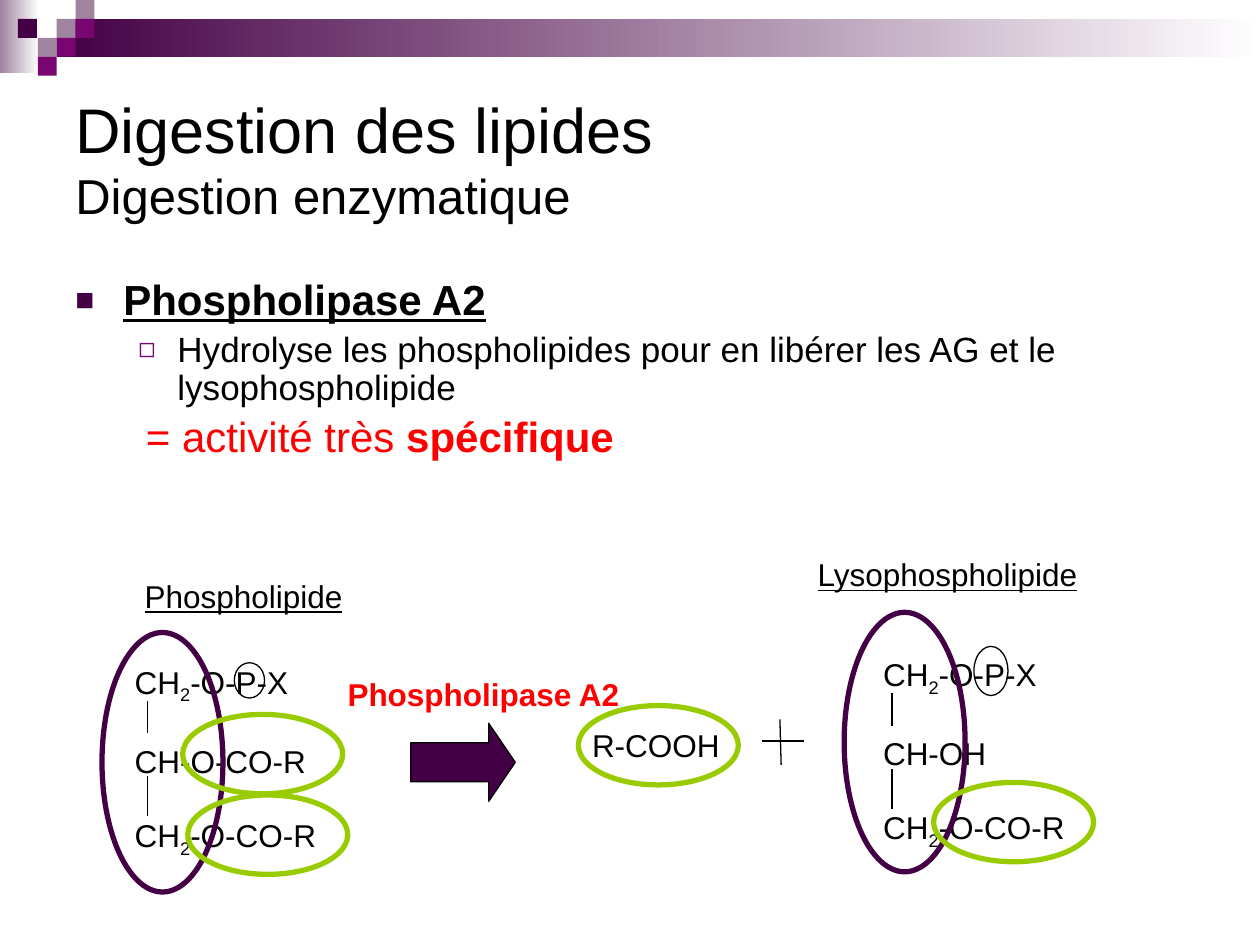
from dataclasses import dataclass

from lxml import etree
from pptx import Presentation
from pptx.dml.color import RGBColor
from pptx.enum.shapes import MSO_CONNECTOR, MSO_SHAPE
from pptx.enum.text import MSO_ANCHOR
from pptx.oxml.ns import qn
from pptx.util import Inches, Pt


@dataclass(frozen=True)
class Theme:
    font: str = "Arial"
    black: str = "000000"
    white: str = "FFFFFF"
    red: str = "FF0000"
    plum: str = "440044"
    magenta: str = "790571"
    mauve: str = "9F839F"
    lime: str = "99CC00"
    title: int = 36
    subtitle: int = 28
    heading: int = 24
    body: int = 20
    label: int = 18
    thin: float = 0.75
    thick: float = 3


THEME = Theme()


def rgb(value):
    return RGBColor.from_string(value)


def add_shape(slide, kind, box, fill=None, line=None, weight=THEME.thin):
    """A fill given as a pair of colours becomes a left-to-right gradient."""
    shape = slide.shapes.add_shape(kind, *map(Inches, box))
    shape.shadow.inherit = False
    if isinstance(fill, tuple):
        shape.fill.gradient()
        shape.fill.gradient_angle = 0
        for stop, color in zip(shape.fill.gradient_stops, fill):
            stop.color.rgb = rgb(color)
    elif fill:
        shape.fill.solid()
        shape.fill.fore_color.rgb = rgb(fill)
    else:
        shape.fill.background()
    if line:
        shape.line.color.rgb = rgb(line)
        shape.line.width = Pt(weight)
    else:
        shape.line.fill.background()
    return shape


def add_oval(slide, box, color, weight=THEME.thick):
    add_shape(slide, MSO_SHAPE.OVAL, box, line=color, weight=weight)


def add_line(slide, x1, y1, x2, y2):
    line = slide.shapes.add_connector(
        MSO_CONNECTOR.STRAIGHT, *map(Inches, (x1, y1, x2, y2)))
    line.line.color.rgb = rgb(THEME.black)
    line.line.width = Pt(THEME.thin)
    etree.SubElement(line._element.spPr, qn("a:effectLst"))


def add_text_frame(slide, box, wrap=False):
    frame = slide.shapes.add_textbox(*map(Inches, box)).text_frame
    frame.word_wrap = wrap
    return frame


def set_font(font, size=None, color=THEME.black, bold=None, underline=None):
    font.name = THEME.font
    font.color.rgb = rgb(color)
    font.size = Pt(size) if size else None
    font.bold = bold
    font.underline = underline


def add_label(slide, box, text, **style):
    paragraph = add_text_frame(slide, box).paragraphs[0]
    paragraph.text = text
    set_font(paragraph.font, THEME.label, **style)


def set_indent(paragraph, margin, first, bullet=None):
    props = paragraph._p.get_or_add_pPr()
    props.set("marL", str(Inches(margin)))
    props.set("indent", str(Inches(first)))
    if not bullet:
        etree.SubElement(props, qn("a:buNone"))
        return
    char, color, percent = bullet
    color_node = etree.SubElement(props, qn("a:buClr"))
    etree.SubElement(color_node, qn("a:srgbClr"), val=color)
    etree.SubElement(props, qn("a:buSzPct"), val=str(percent * 1000))
    etree.SubElement(props, qn("a:buFont"), typeface=THEME.font)
    etree.SubElement(props, qn("a:buChar"), char=char)


def add_banner(slide, left, top, width):
    rect = MSO_SHAPE.RECTANGLE
    cell = 0.15
    add_shape(slide, rect, (left, top, 0.31, 0.58), (THEME.mauve, THEME.white))
    add_shape(slide, rect, (left + 3 * cell, top + cell, width - 3 * cell, 2 * cell),
              (THEME.plum, THEME.white))
    # Mosaic squares: column, row, colour
    for column, row, color in ((3, 1, THEME.mauve), (4, 0, THEME.mauve),
                               (4, 1, THEME.magenta), (2, 2, THEME.mauve),
                               (0.95, 1, THEME.plum), (3, 2, THEME.magenta),
                               (2, 3, THEME.magenta)):
        add_shape(slide, rect, (left + column * cell, top + row * cell, cell, cell), color)


def add_title(slide, box):
    frame = add_text_frame(slide, box, wrap=True)
    frame.vertical_anchor = MSO_ANCHOR.MIDDLE
    paragraph = frame.paragraphs[0]
    set_font(paragraph.font)
    title = paragraph.add_run()
    title.text = "Digestion des lipides "
    title.font.size = Pt(THEME.title)
    paragraph.add_line_break()
    subtitle = paragraph.add_run()
    subtitle.text = "Digestion enzymatique"
    subtitle.font.size = Pt(THEME.subtitle)


def add_body(slide, box):
    frame = add_text_frame(slide, box, wrap=True)
    enzyme, action, remark = (frame.paragraphs[0], frame.add_paragraph(),
                              frame.add_paragraph())
    enzyme.text = "Phospholipase A2"
    set_indent(enzyme, 0.38, -0.38, ("■", THEME.plum, 75))
    set_font(enzyme.font, THEME.heading, bold=True, underline=True)

    action.text = ("Hydrolyse les phospholipides pour en libérer les AG "
                   "et le lysophospholipide")
    action.level = 1
    set_indent(action, 0.81, -0.31, ("◻", THEME.magenta, 80))
    set_font(action.font, THEME.body)

    remark.add_run().text = "= activité très "
    emphasis = remark.add_run()
    emphasis.text = "spécifique"
    emphasis.font.bold = True
    remark.level = 1
    set_indent(remark, 0.56, 0)
    set_font(remark.font, THEME.heading, THEME.red)

    for paragraph in frame.paragraphs:
        paragraph.line_spacing = 0.9
        paragraph.space_before = Pt(0.2 * paragraph.font.size.pt)


def add_molecule(slide, left, top, rows, bond_x, backbone, acids, phosphate):
    """Formula with bonds; the ovals are offsets from the formula's corner."""
    frame = add_text_frame(slide, (left, top, 1.65, 1.6))
    for index, row in enumerate(rows):
        paragraph = frame.paragraphs[0] if index == 0 else frame.add_paragraph()
        if index:
            paragraph.space_before = Pt(20.7)
        set_font(paragraph.font, THEME.label)
        for part in row:
            run = paragraph.add_run()
            run.text = part
            if part == "2":
                run.font._element.set("baseline", "-25000")
    for start, end in ((0.35, 0.61), (0.95, 1.27)):
        add_line(slide, left + bond_x, top + start, left + bond_x, top + end)

    def oval(dx, dy, width, height, *style):
        add_oval(slide, (left + dx, top + dy, width, height), *style)

    oval(*backbone, 0.96, 2.06, THEME.plum)
    for acid in acids:
        oval(*acid, 1.27, 0.63, THEME.lime)
    oval(*phosphate, THEME.black, THEME.thin)


def add_reaction(slide, left, top):
    head, tail = ("CH", "2", "-O-P-X"), ("CH", "2", "-O-CO-R")
    # Substrate
    add_molecule(slide, left + 0.16, top + 0.85, (head, ("CH-O-CO-R",), tail), 0.2,
                 (-0.16, -0.19), ((0.48, 0.46), (0.52, 1.1)), (0.89, 0.05, 0.24, 0.28))
    add_label(slide, (left + 0.24, top + 0.17, 1.77, 0.4), "Phospholipide", underline=True)
    # Enzyme arrow
    arrow = add_shape(slide, MSO_SHAPE.RIGHT_ARROW, (left + 2.45, top + 1.38, 0.83, 0.62),
                      THEME.plum, THEME.black)
    arrow.adjustments[1] = 0.34
    add_label(slide, (left + 1.85, top + 0.95, 2.38, 0.4), "Phospholipase A2",
              color=THEME.red, bold=True)
    # Released fatty acid and plus sign
    add_label(slide, (left + 3.79, top + 1.35, 1.22, 0.4), "R-COOH")
    add_oval(slide, (left + 3.78, top + 1.24, 1.27, 0.63), THEME.lime)
    add_line(slide, left + 5.38, top + 1.35, left + 5.39, top + 1.71)
    add_line(slide, left + 5.24, top + 1.52, left + 5.57, top + 1.52)
    # Product
    add_molecule(slide, left + 6.1, top + 0.79, (head, ("CH-OH",), tail), 0.17,
                 (-0.21, -0.29), ((0.5, 1.06),), (0.82, -0.02, 0.27, 0.39))
    add_label(slide, (left + 5.58, top, 2.27, 0.4), "Lysophospholipide", underline=True)


def main():
    deck = Presentation()
    deck.slide_width, deck.slide_height = Inches(10), Inches(7.5)
    slide = deck.slides.add_slide(deck.slide_layouts[6])
    add_banner(slide, 0, 0, 10)
    add_title(slide, (0.5, 0.5, 9, 1.5))
    add_body(slide, (0.5, 2.17, 8.89, 2.39))
    add_reaction(slide, 0.81, 4.36)
    deck.save("out.pptx")


if __name__ == "__main__":
    main()
